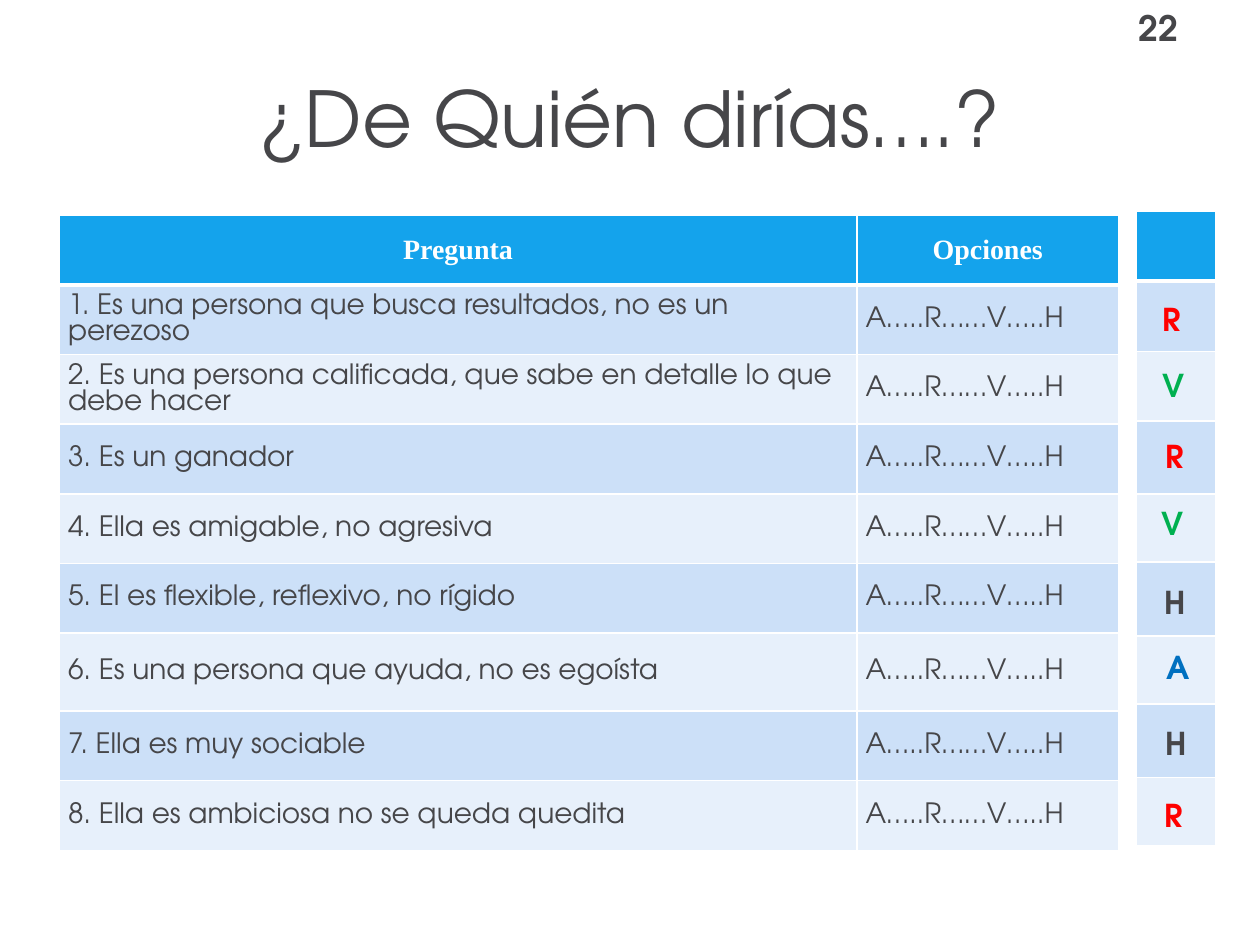
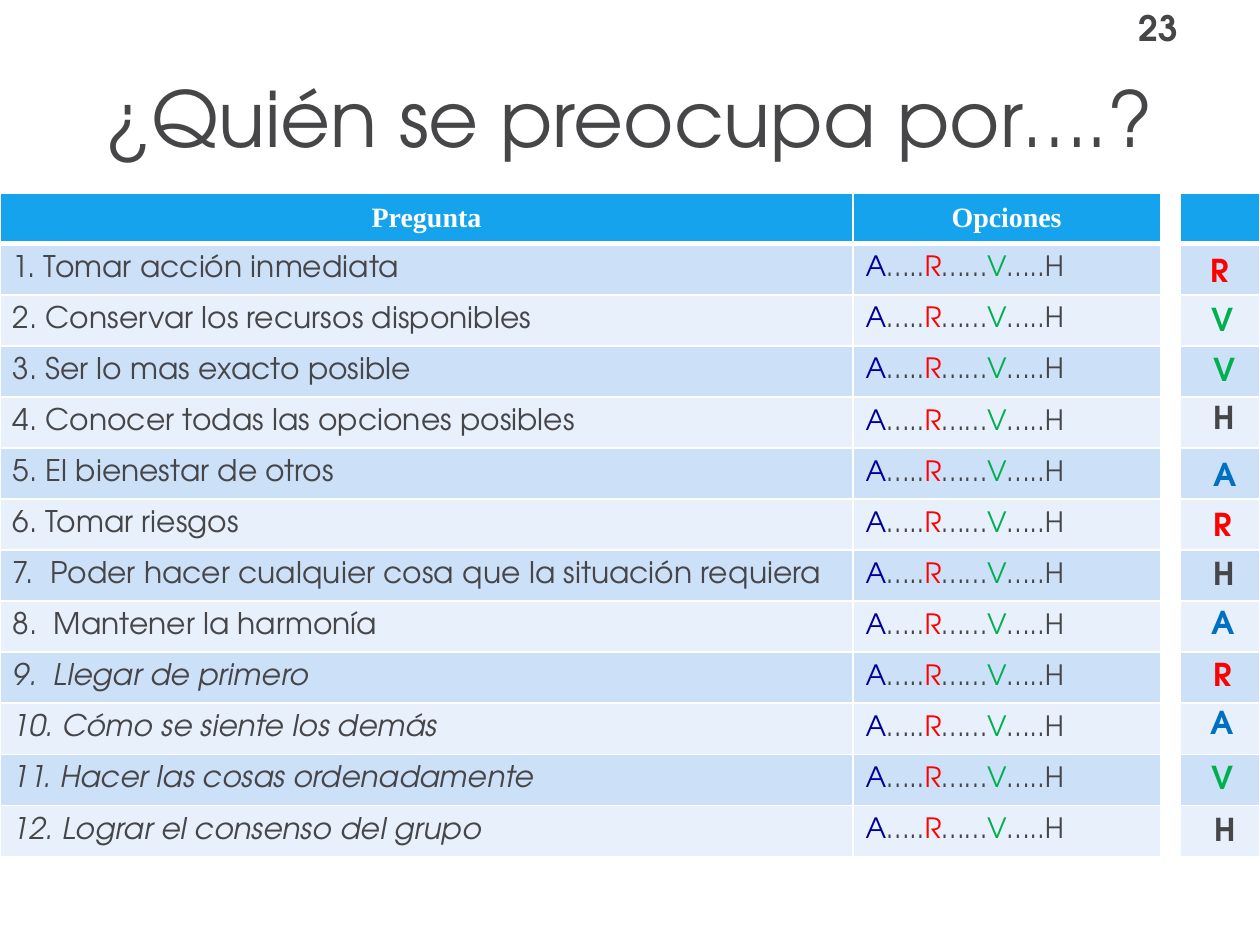
from lxml.etree import SubElement
from pptx import Presentation
from pptx.dml.color import RGBColor
from pptx.enum.text import MSO_ANCHOR, MSO_AUTO_SIZE, PP_ALIGN
from pptx.oxml.ns import qn
from pptx.util import Inches, Pt

COLORS = {
    "text": "464649",
    "white": "FFFFFF",
    "header": "14A3EC",
    "odd_row": "CCE0F8",
    "even_row": "E7F0FB",
    "navy": "000099",
    "blue": "0070C0",
    "red": "FF0000",
    "green": "00B050",
}
BODY_FONT = "TeX Gyre Adventor"
HEADER_FONT = "Times New Roman"
ANSWER_COLORS = {"A": "blue", "R": "red", "V": "green", "H": "text"}
PLAIN_OPTIONS = [("A…..R……V…..H", "text")]
COLORED_OPTIONS = [
    ("A", "navy"), ("…..", "text"), ("R", "red"),
    ("……", "text"), ("V", "green"), ("…..H", "text"),
]

PERSON_QUESTIONS = [
    "1. Es una persona que busca resultados, no es un perezoso",
    "2. Es una persona calificada, que sabe en detalle lo que debe hacer",
    "3. Es un ganador",
    "4. Ella es amigable, no agresiva",
    "5. El es flexible, reflexivo, no rígido",
    "6. Es una persona que ayuda, no es egoísta",
    "7. Ella es muy sociable",
    "8. Ella es ambiciosa no se queda quedita",
]
PERSON_ANSWERS = [
    ("R", 9.13, 2.33), ("V", 9.13, 2.86), ("R", 9.15, 3.42), ("V", 9.12, 3.95),
    ("H", 9.14, 4.58), ("A", 9.16, 5.09), ("H", 9.15, 5.7), ("R", 9.14, 6.27),
]
CONCERN_QUESTIONS = [
    "1. Tomar acción inmediata",
    "2. Conservar los recursos disponibles",
    "3. Ser lo mas exacto posible",
    "4. Conocer todas las opciones posibles",
    "5. El bienestar de otros",
    "6. Tomar riesgos",
    "7.  Poder hacer cualquier cosa que la situación requiera",
    "8.  Mantener la harmonía",
    "9.  Llegar de primero",
    "10. Cómo se siente los demás",
    "11. Hacer las cosas ordenadamente",
    "12. Lograr el consenso del grupo",
]
CONCERN_ANSWERS = [
    ("R", 9.51, 1.94), ("V", 9.52, 2.33), ("V", 9.53, 2.73), ("H", 9.53, 3.11),
    ("A", 9.53, 3.56), ("R", 9.53, 3.96), ("H", 9.53, 4.35), ("A", 9.52, 4.74),
    ("R", 9.53, 5.15), ("A", 9.51, 5.53), ("V", 9.52, 5.97), ("H", 9.54, 6.38),
]


def rgb(color):
    return RGBColor.from_string(COLORS[color])


def style_font(font, size, color, name=BODY_FONT, bold=False, italic=False):
    font.size = Pt(size)
    font.name = name
    font.bold = bold
    font.italic = italic
    font.color.rgb = rgb(color)


def add_text(slide, text, box, size, color="text", bold=False):
    shape = slide.shapes.add_textbox(*map(Inches, box))
    frame = shape.text_frame
    frame.word_wrap = True
    paragraph = frame.paragraphs[0]
    paragraph.text = text
    style_font(paragraph.font, size, color, bold=bold)
    return shape


def add_heading(slide, title, number):
    add_text(slide, number, (8.94, 0, 0.94, 0.44), 20, bold=True)
    frame = add_text(slide, title, (0.5, 0.3, 9, 1.25), 44).text_frame
    frame.vertical_anchor = MSO_ANCHOR.MIDDLE
    frame.paragraphs[0].alignment = PP_ALIGN.CENTER


def set_borders(cell, top, bottom):
    """Draw white cell borders; top and bottom widths are in points."""
    properties = cell._tc.get_or_add_tcPr()
    for side, width in (("L", 1), ("R", 1), ("T", top), ("B", bottom)):
        line = SubElement(properties, qn(f"a:ln{side}"), w=str(Pt(width)))
        fill = SubElement(line, qn("a:solidFill"))
        SubElement(fill, qn("a:srgbClr"), val=COLORS["white"])


def add_banded_table(slide, left, top, widths, heights):
    shape = slide.shapes.add_table(
        len(heights), len(widths), Inches(left), Inches(top),
        Inches(sum(widths)), Inches(sum(heights)))
    table = shape.table
    for column, width in zip(table.columns, widths):
        column.width = Inches(width)
    for index, (row, height) in enumerate(zip(table.rows, heights)):
        row.height = Inches(height)
        band = "odd_row" if index % 2 else "even_row"
        for cell in row.cells:
            set_borders(cell, 3 if index == 1 else 1, 3 if index == 0 else 1)
            cell.fill.solid()
            cell.fill.fore_color.rgb = rgb("header" if index == 0 else band)
    return table


def set_tight_margins(cell):
    cell.margin_left = cell.margin_right = Inches(0.07)
    cell.margin_top = cell.margin_bottom = 0


def fill_header(cell, text):
    set_tight_margins(cell)
    cell.vertical_anchor = MSO_ANCHOR.MIDDLE
    paragraph = cell.text_frame.paragraphs[0]
    paragraph.text = text
    paragraph.alignment = PP_ALIGN.CENTER
    style_font(paragraph.font, 16, "white", HEADER_FONT, bold=True)


def fill_body(cell, parts, size, tight, italic=False):
    """Write (text, color) parts as the runs of one body cell."""
    if tight:
        set_tight_margins(cell)
    cell.vertical_anchor = MSO_ANCHOR.MIDDLE
    paragraph = cell.text_frame.paragraphs[0]
    for text, color in parts:
        run = paragraph.add_run()
        run.text = text
        style_font(run.font, size, color, italic=italic)


def add_question_table(slide, left, top, widths, heights, questions, options,
                       size, tight=False, italic_from=None):
    table = add_banded_table(slide, left, top, widths, heights)
    for column, label in enumerate(("Pregunta", "Opciones")):
        fill_header(table.cell(0, column), label)
    for row, question in enumerate(questions, start=1):
        italic = italic_from is not None and row >= italic_from
        fill_body(table.cell(row, 0), [(question, "text")], size, tight, italic)
        fill_body(table.cell(row, 1), options, 16, tight)


def add_answers(slide, answers):
    for letter, left, top in answers:
        shape = add_text(slide, letter, (left, top, 0.33, 0.4), 18,
                         ANSWER_COLORS[letter], bold=True)
        shape.text_frame.auto_size = MSO_AUTO_SIZE.SHAPE_TO_FIT_TEXT


def add_person_slide(presentation):
    slide = presentation.slides.add_slide(presentation.slide_layouts[6])
    add_heading(slide, "¿De Quién dirías….?", "22")
    row_height = (5.04 - 0.62) / 8
    heights = [row_height] * 6 + [0.62] + [row_height] * 2
    add_question_table(slide, 0.47, 1.71, [6.33, 2.08], heights,
                       PERSON_QUESTIONS, PLAIN_OPTIONS, 16, tight=True)
    add_banded_table(slide, 9.02, 1.68, [0.63],
                     [0.55, 0.56, 0.55, 0.58, 0.54, 0.59, 0.54, 0.58, 0.54])
    add_answers(slide, PERSON_ANSWERS)


def add_concern_slide(presentation):
    slide = presentation.slides.add_slide(presentation.slide_layouts[6])
    add_heading(slide, "¿Quién se preocupa por….?", "23")
    row_count = len(CONCERN_QUESTIONS) + 1
    heights = [5.27 / row_count] * row_count
    add_question_table(slide, 0, 1.53, [6.77, 2.44], heights,
                       CONCERN_QUESTIONS, COLORED_OPTIONS, 17, italic_from=9)
    add_banded_table(slide, 9.37, 1.53, [0.63], heights)
    add_answers(slide, CONCERN_ANSWERS)


def main():
    presentation = Presentation()
    presentation.slide_width = Inches(10)
    presentation.slide_height = Inches(7.5)
    add_person_slide(presentation)
    add_concern_slide(presentation)
    presentation.save("out.pptx")


if __name__ == "__main__":
    main()
